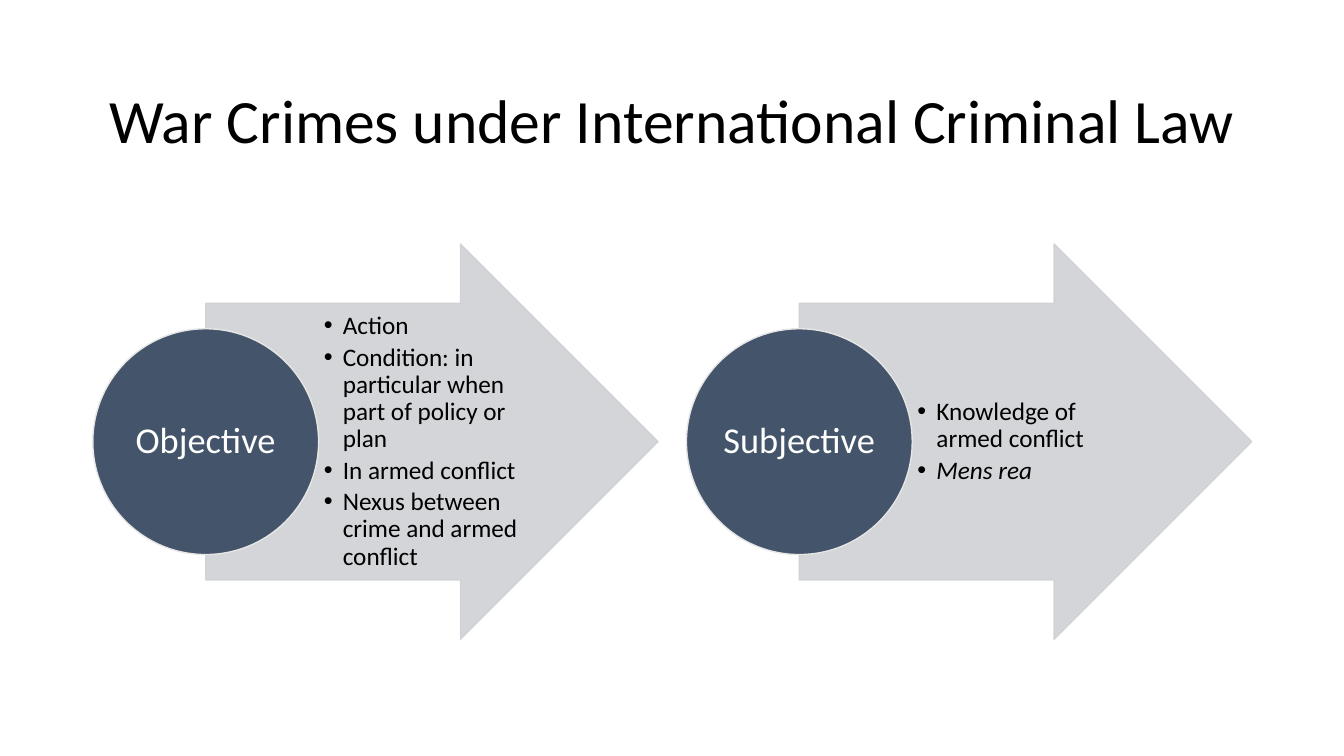
from lxml.etree import SubElement
from pptx import Presentation
from pptx.dml.color import RGBColor
from pptx.enum.shapes import MSO_SHAPE
from pptx.enum.text import MSO_ANCHOR, PP_ALIGN
from pptx.oxml.ns import qn
from pptx.util import Cm, Pt

TITLE = "War Crimes under International Criminal Law"
ELEMENTS = [
    ("Objective", [
        "Action",
        "Condition: in particular when part of policy or plan",
        "In armed conflict",
        "Nexus between crime and armed conflict",
    ]),
    ("Subjective", ["Knowledge of armed conflict", "Mens rea"]),
]
ITALIC = {"Mens rea"}
COLORS = {"text": "000000", "arrow": "CFD1D4", "circle": "44546A",
          "rim": "E7E6E6", "label": "FFFFFF"}
FONT = "Calibri"

# Lengths in centimetres
MARGIN = 2.34
STEP = 14.96
MIDDLE = 11.13
DIAMETER = 5.69
ARROW_WIDTH, ARROW_HEIGHT = 11.4, 9.96
SHAFT = 0.7
POINTS_WIDTH = 5.56
INDENT = 0.48


def color(name):
    return RGBColor.from_string(COLORS[name])


def box(left, top, width, height):
    return Cm(left), Cm(top), Cm(width), Cm(height)


def write(shape, lines, size, ink, align, insets, space_after=0):
    """Fill a shape with one paragraph per line, insets as left, top, right, bottom."""
    frame = shape.text_frame
    frame.text = "\n".join(lines)
    frame.word_wrap = True
    frame.vertical_anchor = MSO_ANCHOR.MIDDLE
    (frame.margin_left, frame.margin_top,
     frame.margin_right, frame.margin_bottom) = map(Cm, insets)
    for paragraph in frame.paragraphs:
        paragraph.alignment = align
        paragraph.line_spacing = 0.9
        paragraph.space_after = Pt(space_after)
        for run in paragraph.runs:
            run.font.name = FONT
            run.font.size = Pt(size)
            run.font.color.rgb = color(ink)
            run.font.italic = run.text in ITALIC
    return frame


def add_bullets(frame):
    for paragraph in frame.paragraphs:
        properties = paragraph._p.get_or_add_pPr()
        properties.set("marL", str(Cm(INDENT)))
        properties.set("indent", str(-Cm(INDENT)))
        SubElement(properties, qn("a:buFont"), typeface="Arial")
        SubElement(properties, qn("a:buChar"), char="•")


def add_figure(slide, preset, place, fill, line):
    figure = slide.shapes.add_shape(preset, *place)
    figure.shadow.inherit = False
    figure.fill.solid()
    figure.fill.fore_color.rgb = color(fill)
    figure.line.color.rgb = color(line)
    figure.line.width = Pt(1)
    return figure


def add_element(slide, left, label, points):
    """Draw an arrow with its points and a labelled circle at its tail."""
    arrow = add_figure(
        slide, MSO_SHAPE.RIGHT_ARROW,
        box(left + DIAMETER / 2, MIDDLE - ARROW_HEIGHT / 2, ARROW_WIDTH, ARROW_HEIGHT),
        "arrow", "arrow")
    arrow.adjustments[0] = SHAFT
    arrow.adjustments[1] = 0.5
    for tint in arrow._element.spPr.iter(qn("a:srgbClr")):
        SubElement(tint, qn("a:alpha"), val="90000")

    shaft_height = SHAFT * ARROW_HEIGHT
    points_box = slide.shapes.add_textbox(
        *box(left + DIAMETER, MIDDLE - shaft_height / 2, POINTS_WIDTH, shaft_height))
    add_bullets(write(points_box, points, 18, "text", PP_ALIGN.LEFT,
                      (0.13, 0.03, 0.08, 0.03), space_after=3))

    circle = add_figure(
        slide, MSO_SHAPE.OVAL,
        box(left, MIDDLE - DIAMETER / 2, DIAMETER, DIAMETER), "circle", "rim")
    write(circle, [label], 26, "label", PP_ALIGN.CENTER, (0.05,) * 4)


def main():
    deck = Presentation()
    deck.slide_width, deck.slide_height = Cm(33.87), Cm(19.05)
    slide = deck.slides.add_slide(deck.slide_layouts[6])

    title = slide.shapes.add_textbox(*box(MARGIN, 1.55, 29.21, 3.15))
    write(title, [TITLE], 44, "text", PP_ALIGN.CENTER, (0.25, 0.13, 0.25, 0.13))

    for index, (label, points) in enumerate(ELEMENTS):
        add_element(slide, MARGIN + index * STEP, label, points)

    deck.save("out.pptx")


if __name__ == "__main__":
    main()
